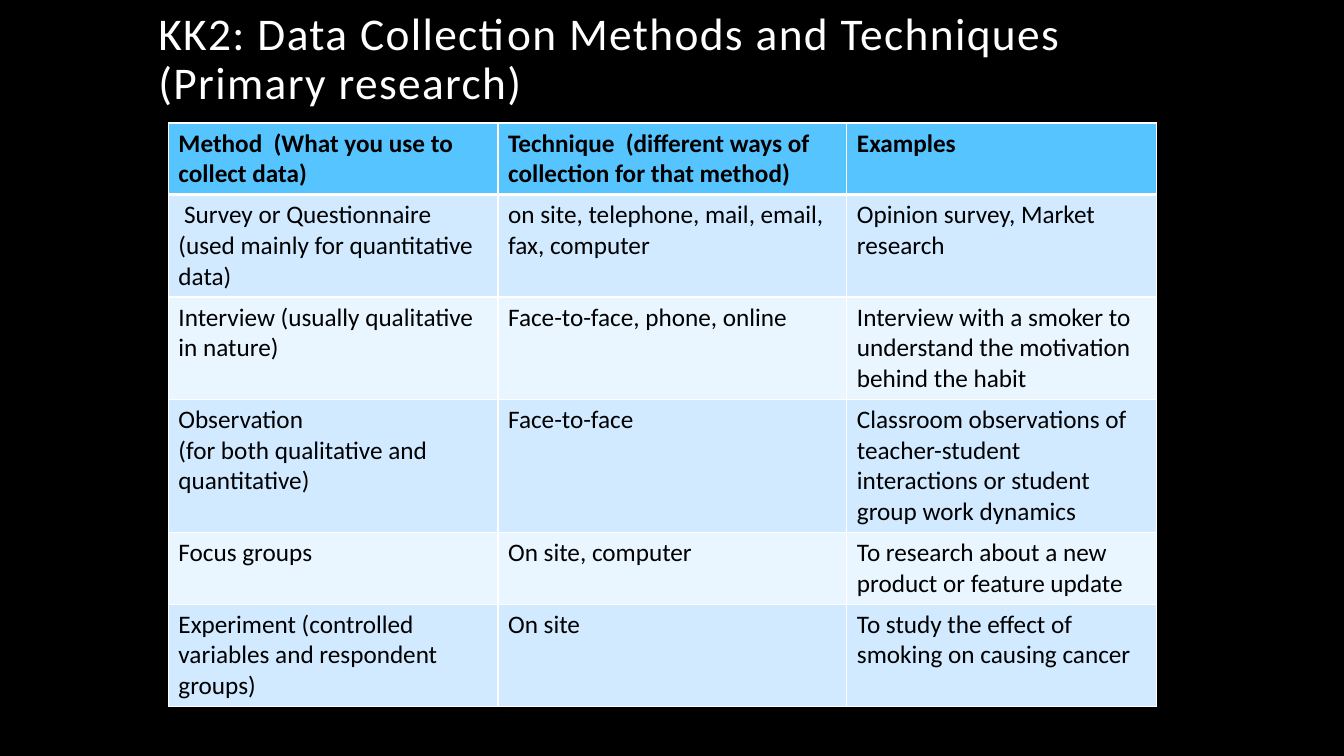
from lxml.etree import SubElement
from pptx import Presentation
from pptx.dml.color import RGBColor
from pptx.enum.text import MSO_ANCHOR, MSO_AUTO_SIZE, PP_ALIGN
from pptx.oxml.ns import qn
from pptx.util import Inches, Pt

BLACK = RGBColor(0x00, 0x00, 0x00)
WHITE = RGBColor(0xFF, 0xFF, 0xFF)
HEAD = RGBColor(0x56, 0xC5, 0xFF)
BANDS = [RGBColor(0xE9, 0xF5, 0xFF), RGBColor(0xD1, 0xEA, 0xFF)]

TITLE = "KK2: Data Collection Methods and Techniques (Primary research)"
WIDTHS = [3.27, 3.46, 3.07]
LINES = [2, 3, 3, 4, 2, 3]
ROWS = [
    ("Method  (What you use to collect data)",
     "Technique  (different ways of collection for that method)",
     "Examples"),
    (" Survey or Questionnaire\n(used mainly for quantitative data)",
     "on site, telephone, mail, email, fax, computer",
     "Opinion survey, Market research"),
    ("Interview (usually qualitative in nature)",
     "Face-to-face, phone, online",
     "Interview with a smoker to understand the motivation behind the habit"),
    ("Observation\n(for both qualitative and quantitative)",
     "Face-to-face",
     "Classroom observations of teacher-student interactions or student "
     "group work dynamics"),
    ("Focus groups",
     "On site, computer",
     "To research about a new product or feature update"),
    ("Experiment (controlled variables and respondent groups)",
     "On site",
     "To study the effect of smoking on causing cancer"),
]


def write(frame, text, size=18, color=BLACK, bold=False, space=None, gap=0):
    frame.text = text
    for para in frame.paragraphs:
        para.alignment = PP_ALIGN.LEFT
        if space:
            para.line_spacing = space
        for run in para.runs:
            font = run.font
            font.name = "Calibri"
            font.size = Pt(size)
            font.bold = bold
            font.color.rgb = color
            if gap:
                font._element.set("spc", str(int(gap * 100)))


def border(cell, top, bottom):
    props = cell._tc.get_or_add_tcPr()
    for side, width in zip("LRTB", (1, 1, top, bottom)):
        line = SubElement(props, qn("a:ln" + side), w=str(Pt(width)))
        fill = SubElement(line, qn("a:solidFill"))
        SubElement(fill, qn("a:srgbClr"), val=str(WHITE))


def add_title(slide, left, top, width, height):
    title = slide.shapes.title
    title.left, title.top = Inches(left), Inches(top)
    title.width, title.height = Inches(width), Inches(height)
    frame = title.text_frame
    frame.word_wrap = True
    frame.auto_size = MSO_AUTO_SIZE.NONE
    frame.vertical_anchor = MSO_ANCHOR.BOTTOM
    write(frame, TITLE, size=32.4, color=WHITE, space=0.9, gap=1)


def add_grid(slide, left, top, width, height):
    table = slide.shapes.add_table(
        len(ROWS), len(WIDTHS), Inches(left), Inches(top),
        Inches(width), Inches(height)).table
    for col, share in zip(table.columns, WIDTHS):
        col.width = Inches(width * share / sum(WIDTHS))
    step = (height - 0.1 * len(ROWS)) / sum(LINES)
    for r, (row, count) in enumerate(zip(ROWS, LINES)):
        table.rows[r].height = Inches(0.1 + step * count)
        for c, text in enumerate(row):
            cell = table.cell(r, c)
            border(cell, 3 if r == 1 else 1, 3 if r == 0 else 1)
            cell.fill.solid()
            cell.fill.fore_color.rgb = BANDS[r % 2] if r else HEAD
            write(cell.text_frame, text, bold=r == 0)


def main():
    deck = Presentation()
    deck.slide_width, deck.slide_height = Inches(13.33), Inches(7.5)
    slide = deck.slides.add_slide(deck.slide_layouts[5])
    slide.background.fill.solid()
    slide.background.fill.fore_color.rgb = BLACK
    add_title(slide, 1.47, 0.52, 10, 0.61)
    add_grid(slide, 1.67, 1.22, 9.8, 5.7)
    deck.save("out.pptx")


if __name__ == "__main__":
    main()
